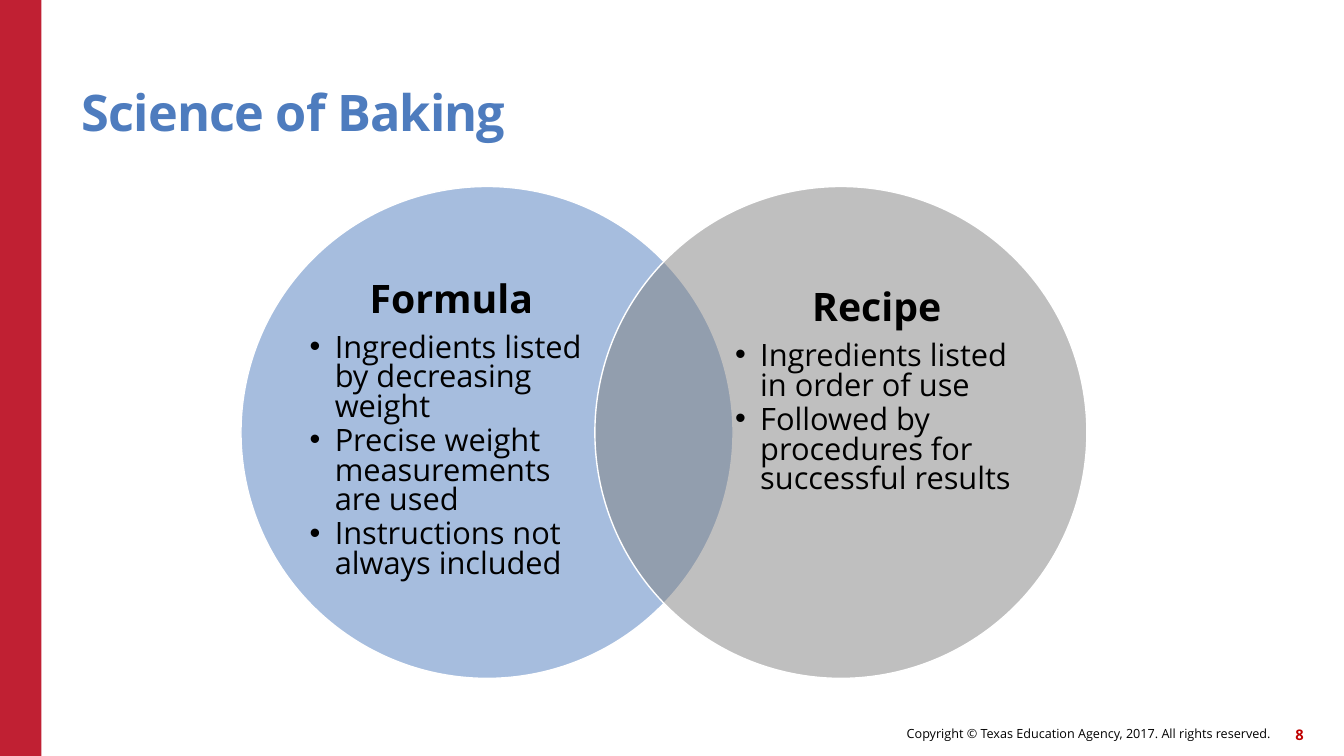
from lxml import etree
from pptx import Presentation
from pptx.dml.color import RGBColor
from pptx.enum.shapes import MSO_SHAPE
from pptx.enum.text import MSO_ANCHOR, PP_ALIGN
from pptx.oxml.ns import qn
from pptx.util import Inches, Pt

RECTANGLE, OVAL = MSO_SHAPE.RECTANGLE, MSO_SHAPE.OVAL
MIDDLE, BOTTOM = MSO_ANCHOR.MIDDLE, MSO_ANCHOR.BOTTOM
LEFT, CENTER, RIGHT = PP_ALIGN.LEFT, PP_ALIGN.CENTER, PP_ALIGN.RIGHT
FONT = "Open Sans"
COLORS = {
    "band": "C02033",
    "blue": "4E7CBE",
    "gray": "808080",
    "white": "FFFFFF",
    "black": "000000",
    "number": "C00000",
}


def add_text_box(left, top, width, height, anchor, lines):
    box = slide.shapes.add_textbox(Inches(left), Inches(top), Inches(width), Inches(height))
    frame = box.text_frame
    frame.word_wrap = True
    frame.vertical_anchor = anchor
    frame.margin_left = frame.margin_right = frame.margin_top = frame.margin_bottom = 0
    frame.text = "\n".join(lines)
    return frame.paragraphs


def style(paragraph, size, color, bold, alignment):
    paragraph.alignment = alignment
    font = paragraph.runs[0].font
    font.name = FONT
    font.size = Pt(size)
    font.bold = bold
    font.color.rgb = RGBColor.from_string(COLORS[color])


presentation = Presentation()
presentation.slide_width = Inches(13.33)
presentation.slide_height = Inches(7.5)
slide = presentation.slides.add_slide(presentation.slide_layouts[6])

band = slide.shapes.add_shape(RECTANGLE, 0, 0, Inches(0.41), Inches(7.5))
band.shadow.inherit = False
band.fill.solid()
band.fill.fore_color.rgb = RGBColor.from_string(COLORS["band"])
band.line.fill.background()

copyright_line = add_text_box(6.14, 7.12, 6.46, 0.32, MIDDLE, ["Copyright © Texas Education Agency, 2017. All rights reserved."])[0]
style(copyright_line, 9, "black", False, RIGHT)

page_number = add_text_box(12.51, 7.13, 0.42, 0.32, MIDDLE, ["8"])[0]
style(page_number, 10.5, "number", True, RIGHT)

title = add_text_box(0.81, 0.45, 11, 0.96, BOTTOM, ["Science of Baking"])[0]
style(title, 36, "blue", True, LEFT)
title.line_spacing = 0.9
title.runs[0].font._element.set("spc", "-60")

circles = [
    (2.39, "blue", 3.07, 3.73, "Formula", [
        "Ingredients listed by decreasing weight",
        "Precise weight measurements are used",
        "Instructions not always included",
    ]),
    (5.9, "gray", 7.29, 2.97, "Recipe", [
        "Ingredients listed in order of use",
        "Followed by procedures for successful results",
    ]),
]

for circle_left, color, text_left, text_height, heading, points in circles:
    circle = slide.shapes.add_shape(OVAL, Inches(circle_left), Inches(1.85), Inches(4.88), Inches(4.88))
    circle.shadow.inherit = False
    circle.fill.solid()
    circle.fill.fore_color.rgb = RGBColor.from_string(COLORS[color])
    fill_color = circle._element.spPr.find(qn("a:solidFill"))[0]
    etree.SubElement(fill_color, qn("a:alpha"), val="50000")
    circle.line.color.rgb = RGBColor.from_string(COLORS["white"])
    circle.line.width = Pt(1)

    heading_line, *bullets = add_text_box(text_left, 2.42, 2.81, text_height, MIDDLE, [heading, *points])
    style(heading_line, 28, "black", True, CENTER)
    heading_line.line_spacing = 0.8
    heading_line.space_after = Pt(9.8)
    for bullet in bullets:
        properties = bullet._p.get_or_add_pPr()
        properties.set("marL", str(Inches(0.25)))
        properties.set("indent", str(-Inches(0.25)))
        etree.SubElement(properties, qn("a:buFont"), typeface="Arial")
        etree.SubElement(properties, qn("a:buChar"), char="•")
        style(bullet, 22, "black", False, LEFT)
        bullet.line_spacing = 0.8
        bullet.space_after = Pt(3.3)

presentation.save("out.pptx")
